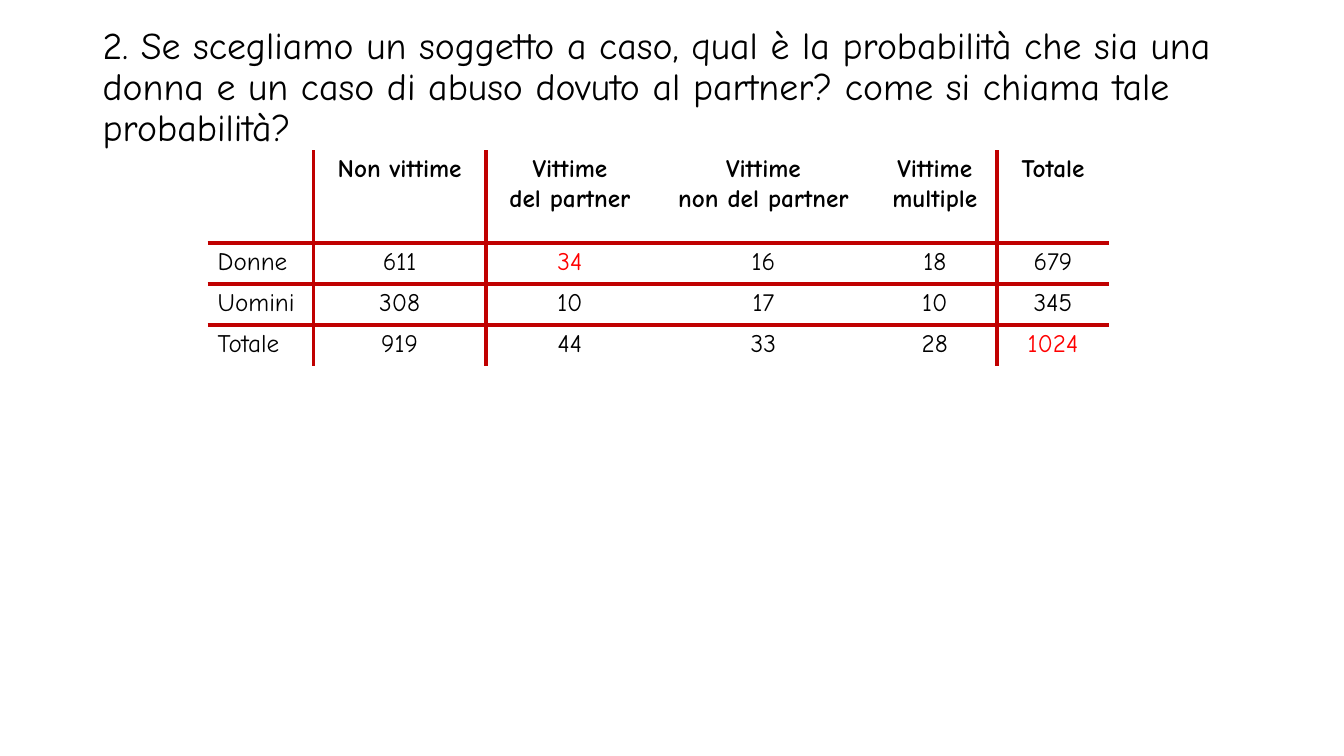
from dataclasses import dataclass

from lxml import etree
from pptx import Presentation
from pptx.dml.color import RGBColor
from pptx.enum.text import MSO_ANCHOR, PP_ALIGN
from pptx.oxml.ns import qn
from pptx.util import Pt

LEFT, CENTER = PP_ALIGN.LEFT, PP_ALIGN.CENTER
MIDDLE = MSO_ANCHOR.MIDDLE


@dataclass(frozen=True)
class Theme:
    font: str = "Comic Neue"
    text: str = "000000"
    highlight: str = "FF0000"
    rule: str = "C00000"
    title_size: float = 27
    table_size: float = 18
    rule_width: float = 3


THEME = Theme()

QUESTION = (
    "2. Se scegliamo un soggetto a caso, qual è la probabilità che sia una donna "
    "e un caso di abuso dovuto al partner? come si chiama tale probabilità?"
)
ROWS = [
    ["", "Non vittime", "Vittime\ndel partner", "Vittime\nnon del partner",
     "Vittime\nmultiple", "Totale"],
    ["Donne", "611", "34", "16", "18", "679"],
    ["Uomini", "308", "10", "17", "10", "345"],
    ["Totale", "919", "44", "33", "28", "1024"],
]
COLUMN_WIDTHS = [75.6, 123.12, 120.24, 156.24, 88.56, 80.28]
ROW_HEIGHTS = [66.24, 29.2, 29.2, 29.2]
RULED_COLUMNS = {1, 2, 5}  # columns with a vertical rule on their left edge
RULED_ROWS = {1, 2, 3}  # rows with a horizontal rule on their top edge
HIGHLIGHTED = {(1, 2), (3, 5)}


def set_font(paragraph, size, color, bold=False):
    paragraph.font.name = THEME.font
    paragraph.font.size = Pt(size)
    paragraph.font.bold = bold
    paragraph.font.color.rgb = RGBColor.from_string(color)


def set_border(cell, side, ruled):
    """Draw one cell edge (lnL, lnR, lnT or lnB) as a rule, or leave it bare."""
    width = Pt(THEME.rule_width if ruled else 1)
    line = etree.SubElement(cell._tc.get_or_add_tcPr(), qn(f"a:{side}"), w=str(width))
    if ruled:
        fill = etree.SubElement(line, qn("a:solidFill"))
        etree.SubElement(fill, qn("a:srgbClr"), val=THEME.rule)
    else:
        etree.SubElement(line, qn("a:noFill"))


deck = Presentation()
deck.slide_width, deck.slide_height = Pt(960), Pt(540)
page = deck.slides.add_slide(deck.slide_layouts[6])

# Contingency table
frame = page.shapes.add_table(
    len(ROWS), len(COLUMN_WIDTHS), Pt(148.32), Pt(107.28),
    Pt(sum(COLUMN_WIDTHS)), Pt(sum(ROW_HEIGHTS)),
)
table = frame.table
table.first_row = table.horz_banding = False
for column, width in zip(table.columns, COLUMN_WIDTHS):
    column.width = Pt(width)
for row, height in zip(table.rows, ROW_HEIGHTS):
    row.height = Pt(height)

for r, values in enumerate(ROWS):
    for c, value in enumerate(values):
        cell = table.cell(r, c)
        set_border(cell, "lnL", c in RULED_COLUMNS)
        set_border(cell, "lnR", c + 1 in RULED_COLUMNS)
        set_border(cell, "lnT", r in RULED_ROWS)
        set_border(cell, "lnB", r + 1 in RULED_ROWS)
        cell.fill.background()
        cell.text = value
        color = THEME.highlight if (r, c) in HIGHLIGHTED else THEME.text
        for paragraph in cell.text_frame.paragraphs:
            paragraph.alignment = CENTER if c else LEFT
            set_font(paragraph, THEME.table_size, color, bold=r == 0)

# Question
title = page.shapes.add_textbox(Pt(66.24), Pt(10.8), Pt(828), Pt(104.4))
title.text_frame.word_wrap = True
title.text_frame.vertical_anchor = MIDDLE
question = title.text_frame.paragraphs[0]
question.text = QUESTION
question.line_spacing = 0.9
set_font(question, THEME.title_size, THEME.text)

deck.save("out.pptx")
